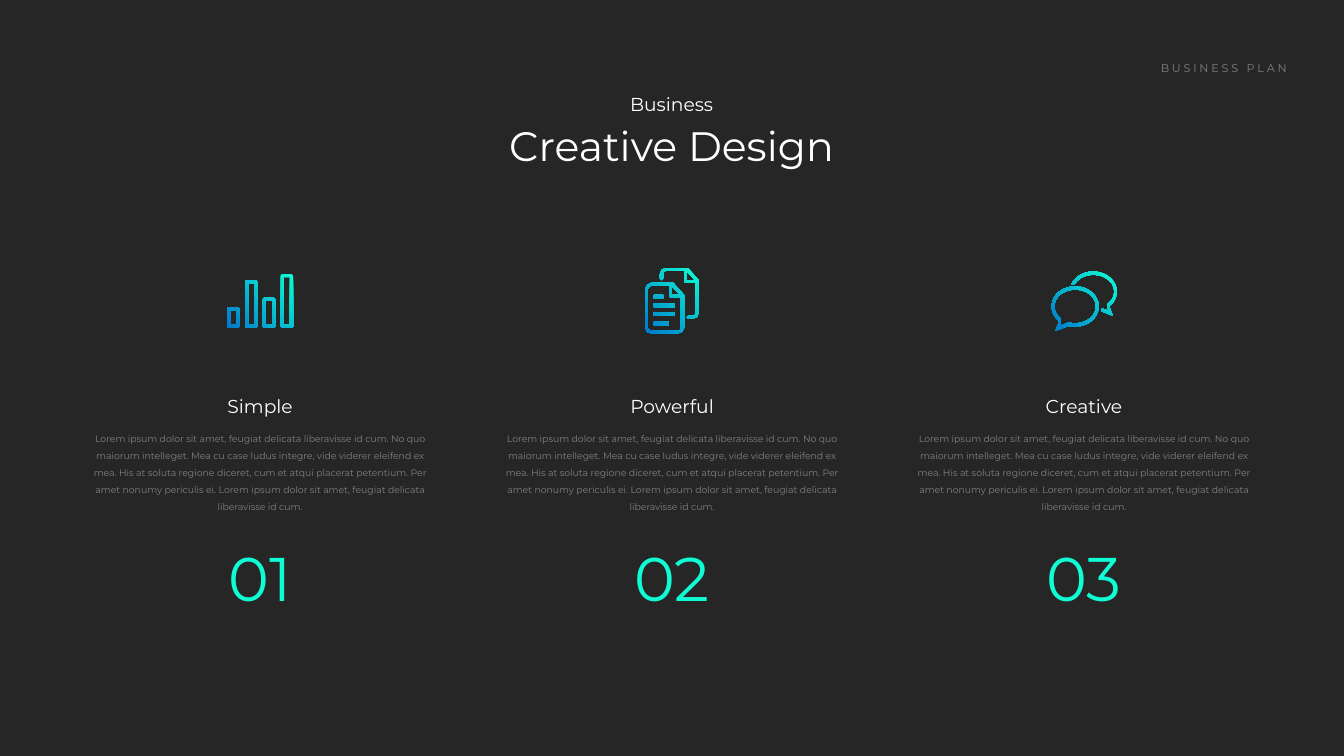
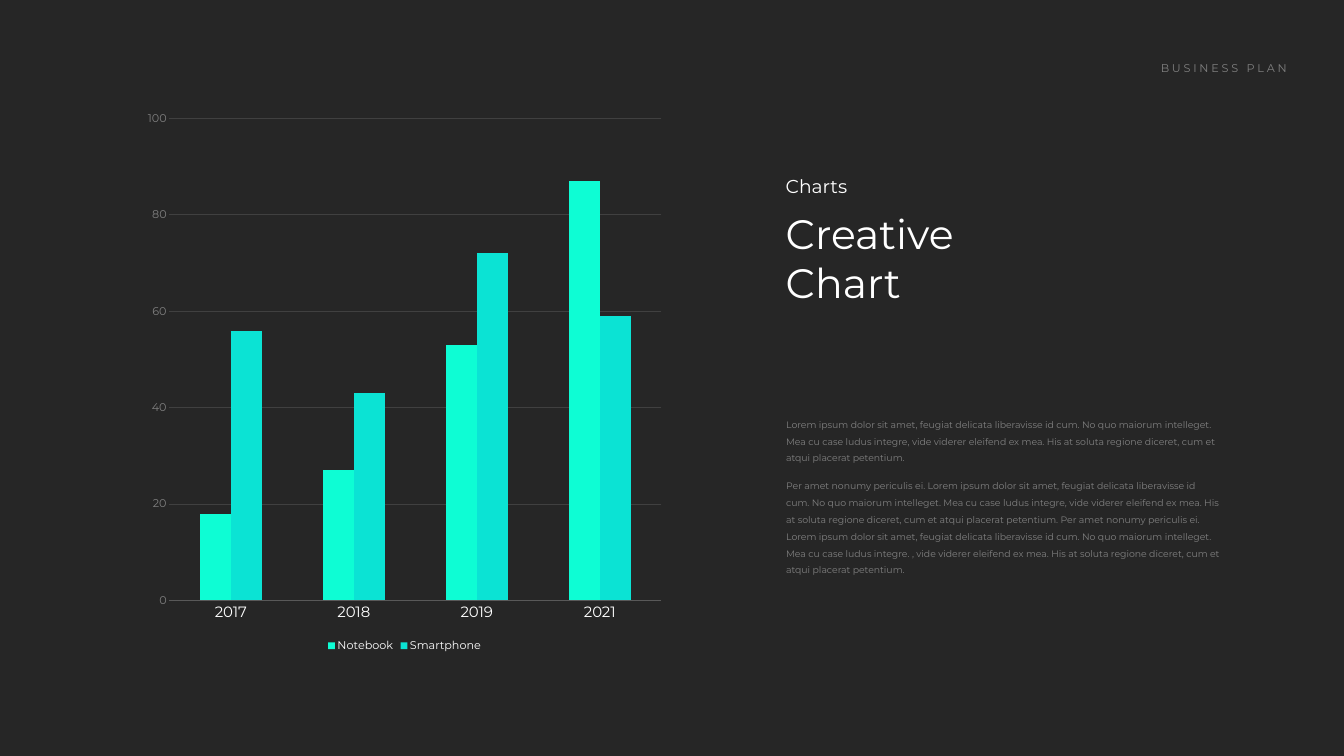
from dataclasses import dataclass
from math import cos, radians, sin
from typing import NamedTuple

from pptx import Presentation
from pptx import util as u
from pptx.chart.data import CategoryChartData
from pptx.dml.color import RGBColor
from pptx.enum import chart as ch
from pptx.enum import text

COLUMNS, ROWS = 20, 11.25
CELL = u.Inches(1)
FONT = "Montserrat"
COLORS = {
    "background": "262626", "white": "FFFFFF", "grey": "808080",
    "mint": "0EFDD4", "turquoise": "0BE3D4", "blue": "0078CF",
    "grid": "404040", "axis": "595959",
}
GREETING = "Lorem ipsum dolor sit amet, feugiat delicata liberavisse id cum."
QUESTION = "No quo maiorum intelleget."
PLEA = "Mea cu case ludus integre, vide viderer eleifend ex mea."
ANSWER = "His at soluta regione diceret, cum et atqui placerat petentium."
CLOSING = "Per amet nonumy periculis ei."
OPENING = f"{GREETING} {QUESTION} {PLEA} {ANSWER}"
FEATURE_TEXT = f"{OPENING} {CLOSING} {GREETING}"
CHART_TEXT = (f"{CLOSING} {OPENING} {CLOSING} {GREETING} {QUESTION} "
              f"{PLEA.replace('integre,', 'integre. ,')} {ANSWER}")

Point = tuple[float, float]
Contour = list[Point]


class Box(NamedTuple):
    """A place on the grid, in columns and rows."""
    left: float
    top: float
    width: float
    height: float

    def lengths(self) -> list[int]:
        return [round(value * CELL) for value in self]


class Line(NamedTuple):
    words: str
    size: float
    color: str = "white"
    before: float = 0
    spacing: float | None = None
    tracking: float = 0


@dataclass
class Feature:
    heading: str
    icon: list[Contour]


def rgb(name: str) -> RGBColor:
    return RGBColor.from_string(COLORS[name])


def fill_gradient(fill) -> None:
    fill.gradient()
    fill.gradient_angle = 225
    for stop, name in zip(fill.gradient_stops, ("mint", "blue")):
        stop.color.rgb = rgb(name)


def write(shape, lines: list[Line], align) -> None:
    frame = shape.text_frame
    frame.text = "\n".join(line.words for line in lines)
    frame.word_wrap = True
    frame.auto_size = text.MSO_AUTO_SIZE.NONE
    frame.vertical_anchor = text.MSO_ANCHOR.TOP
    for para, line in zip(frame.paragraphs, lines):
        para.alignment = align
        para.space_before = u.Pt(line.before)
        if line.spacing:
            para.line_spacing = line.spacing
        for span in para.runs:
            span.font.name = FONT
            span.font.size = u.Pt(line.size)
            if line.color == "gradient":
                fill_gradient(span.font.fill)
            else:
                span.font.color.rgb = rgb(line.color)
            if line.tracking:
                span._r.get_or_add_rPr().set("spc", str(round(line.tracking * 100)))


def add_text(page, box: Box, lines: list[Line], align=text.PP_ALIGN.LEFT) -> None:
    write(page.shapes.add_textbox(*box.lengths()), lines, align)


def body_line(words: str) -> Line:
    return Line(words, 10, "grey", before=12, spacing=1.5)


def add_page(deck, box: Box, kicker: str, title: str, gap: float, align):
    page = deck.slides.add_slide(deck.slide_layouts[5])
    holder = page.shapes.title
    holder.left, holder.top, holder.width, holder.height = box.lengths()
    write(holder, [Line(kicker, 20), Line(title, 44, before=gap)], align)
    add_text(page, Box(16.89, 0.87, 2.36, 0.3),
             [Line("BUSINESS PLAN", 12, "grey", tracking=3)], text.PP_ALIGN.RIGHT)
    return page


def rectangle(left: float, top: float, right: float, bottom: float) -> Contour:
    return [(left, top), (right, top), (right, bottom), (left, bottom)]


def chamfered(left: float, top: float, right: float, bottom: float) -> Contour:
    cut = 0.02
    return [(left + cut, top), (right - cut, top), (right, top + cut),
            (right, bottom - cut), (right - cut, bottom), (left + cut, bottom),
            (left, bottom - cut), (left, top + cut)]


def arc(center: Point, radii: Point, start: int, end: int) -> Contour:
    """Sample an ellipse between two angles, clockwise from the right."""
    steps = 36
    angles = [radians(start + (end - start) * step / steps) for step in range(steps + 1)]
    return [(center[0] + radii[0] * cos(angle), center[1] + radii[1] * sin(angle))
            for angle in angles]


def bar_icon() -> list[Contour]:
    width, pitch, wall, bottom = 0.18, 0.267, 0.045, 0.4
    contours = []
    for index, top in enumerate((0.09, -0.31, -0.05, -0.4)):
        left = -0.49 + index * pitch
        contours += [chamfered(left, top, left + width, bottom),
                     rectangle(left + wall, top + wall, left + width - wall, bottom - wall)]
    return contours


def document_icon() -> list[Contour]:
    front = [(-0.31, -0.27), (0.02, -0.27), (0.18, -0.09), (0.18, 0.4), (0.15, 0.46),
             (0.09, 0.48), (-0.31, 0.48), (-0.37, 0.46), (-0.4, 0.4), (-0.4, -0.18),
             (-0.37, -0.24)]
    paper = [(-0.31, -0.23), (-0.04, -0.23), (-0.04, -0.09), (-0.03, -0.06), (0, -0.05),
             (0.13, -0.05), (0.13, 0.4), (0.12, 0.43), (0.09, 0.44), (-0.31, 0.44),
             (-0.34, 0.43), (-0.36, 0.4), (-0.36, -0.18), (-0.34, -0.21)]
    back = [(-0.09, -0.49), (0.24, -0.49), (0.4, -0.31), (0.4, 0.17), (0.37, 0.24),
            (0.31, 0.26), (0.24, 0.26), (0.22, 0.24), (0.24, 0.22), (0.31, 0.22),
            (0.34, 0.21), (0.35, 0.17), (0.35, -0.27), (0.22, -0.27), (0.19, -0.28),
            (0.18, -0.31), (0.18, -0.45), (-0.09, -0.45), (-0.12, -0.44), (-0.13, -0.4),
            (-0.13, -0.34), (-0.16, -0.31), (-0.18, -0.34), (-0.18, -0.4), (-0.15, -0.47)]
    fold = [(0, -0.22), (0, -0.09), (0.12, -0.09)]
    back_fold = [(x + 0.22, y - 0.22) for x, y in fold]
    rows = [rectangle(-0.27, top, -0.27 + width, top + 0.05)
            for top, width in ((-0.09, 0.14), (0.04, 0.31), (0.17, 0.31), (0.31, 0.22))]
    return [front, paper, fold, back, back_fold, *rows]


def bubble_icon() -> list[Contour]:
    front, back = (-0.13, 0.08), (0.14, -0.14)
    outer, inner = (0.35, 0.3), (0.31, 0.25)
    return [
        arc(front, outer, 133, 465) + [(-0.42, 0.44)],
        arc(front, inner, 133, 468) + [(-0.35, 0.37)],
        arc(back, outer, 200, 407)
        + [(0.43, 0.22), (0.26, 0.15), (0.27, 0.11), (0.36, 0.14)]
        + arc(back, inner, 407, 207),
    ]


def add_icon(page, center: Point, contours: list[Contour]) -> None:
    placed = [[((center[0] + x) * CELL, (center[1] + y) * CELL) for x, y in contour]
              for contour in contours]
    builder = page.shapes.build_freeform(*placed[0][0])
    for index, contour in enumerate(placed):
        if index:
            builder.move_to(*contour[0])
        builder.add_line_segments(contour[1:], close=True)
    icon = builder.convert_to_shape()
    icon.shadow.inherit = False
    icon.line.fill.background()
    fill_gradient(icon.fill)


def add_feature(page, center: float, number: int, feature: Feature) -> None:
    middle = text.PP_ALIGN.CENTER
    add_icon(page, (center, 4.48), feature.icon)
    add_text(page, Box(center - 2.645, 5.82, 5.29, 1.84),
             [Line(feature.heading, 20, before=12), body_line(FEATURE_TEXT)], middle)
    add_text(page, Box(center - 0.97, 7.99, 1.94, 1.21),
             [Line(f"{number:02}", 66, "gradient")], middle)


def style_font(font, size: float, color: str) -> None:
    font.name, font.size = FONT, u.Pt(size)
    font.color.rgb = rgb(color)


def style_line(line, color: str, width: float) -> None:
    line.color.rgb = rgb(color)
    line.width = u.Pt(width)


def add_sales_chart(page, box: Box) -> None:
    data = CategoryChartData()
    data.categories = ["2017", "2018", "2019", "2021"]
    data.add_series("Notebook", [18, 27, 53, 87])
    data.add_series("Smartphone", [56, 43, 72, 59])
    chart = page.shapes.add_chart(
        ch.XL_CHART_TYPE.COLUMN_CLUSTERED, *box.lengths(), data).chart
    style_font(chart.font, 18, "white")
    chart.has_title = False
    chart.has_legend = True
    chart.legend.position = ch.XL_LEGEND_POSITION.BOTTOM
    chart.legend.include_in_layout = False
    style_font(chart.legend.font, 12, "white")

    plot = chart.plots[0]
    plot.gap_width, plot.overlap, plot.vary_by_categories = 200, 0, False
    for series, name in zip(plot.series, ("mint", "turquoise")):
        series.format.fill.solid()
        series.format.fill.fore_color.rgb = rgb(name)

    years, values = chart.category_axis, chart.value_axis
    for axis, size, color in ((years, 16, "white"), (values, 12, "grey")):
        axis.major_tick_mark = axis.minor_tick_mark = ch.XL_TICK_MARK.NONE
        style_font(axis.tick_labels.font, size, color)
    style_line(years.format.line, "axis", 0.75)
    values.format.line.fill.background()
    values.minimum_scale, values.maximum_scale, values.major_unit = 0, 100, 20
    style_line(values.major_gridlines.format.line, "grid", 1)


def main() -> None:
    deck = Presentation()
    deck.slide_width, deck.slide_height = COLUMNS * CELL, round(ROWS * CELL)
    backdrop = deck.slide_master.background.fill
    backdrop.solid()
    backdrop.fore_color.rgb = rgb("background")

    design = add_page(deck, Box(6.83, 1.33, 6.33, 1.26), "Business", "Creative Design",
                      6, text.PP_ALIGN.CENTER)
    features = [Feature("Simple", bar_icon()), Feature("Powerful", document_icon()),
                Feature("Creative", bubble_icon())]
    for index, feature in enumerate(features):
        center = COLUMNS / 2 + (index - 1) * 6.13
        add_feature(design, center, index + 1, feature)

    sales = add_page(deck, Box(11.59, 2.55, 4.24, 2.09), "Charts", "Creative Chart",
                     12, text.PP_ALIGN.LEFT)
    add_sales_chart(sales, Box(2.04, 1.5, 7.96, 8.25))
    add_text(sales, Box(11.6, 6.1, 6.66, 2.51),
             [body_line(OPENING), body_line(CHART_TEXT)])
    deck.save("out.pptx")


if __name__ == "__main__":
    main()
